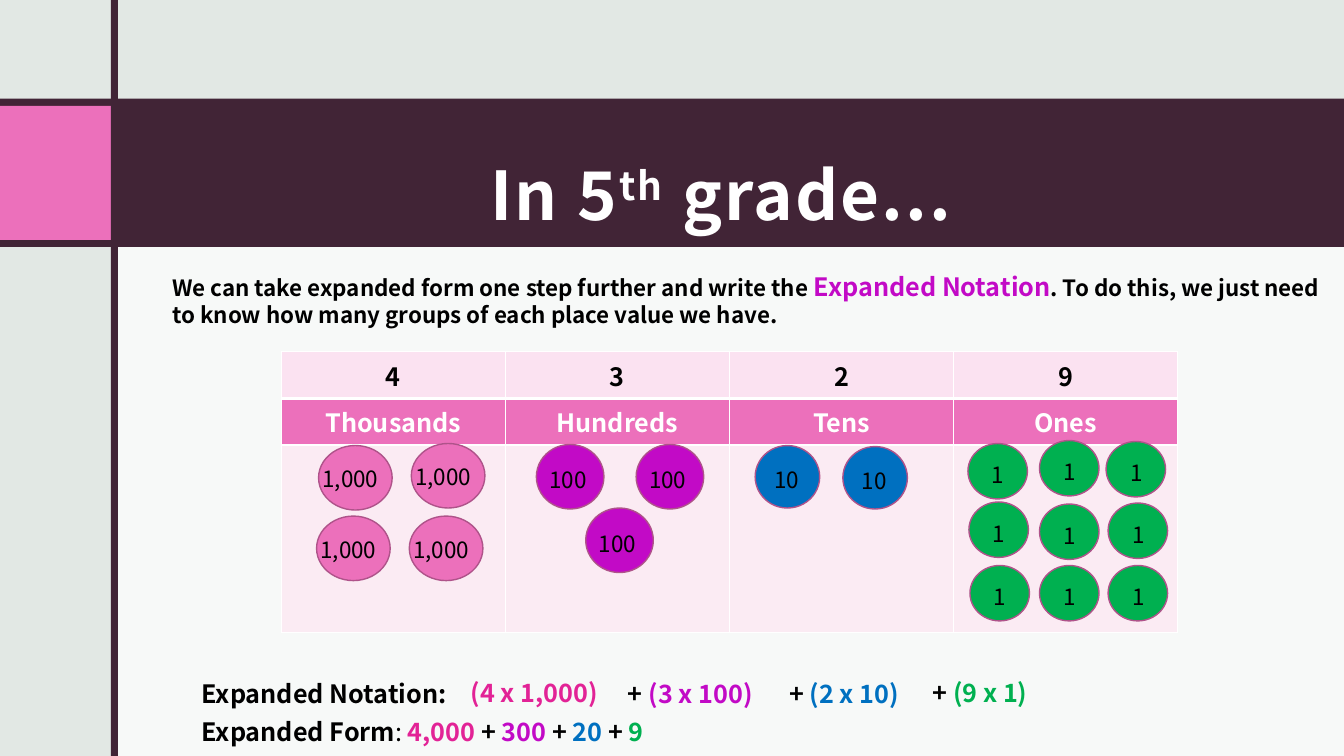
"""Build the fifth-grade expanded notation slide."""
from lxml import etree
from pptx import Presentation
from pptx.dml.color import RGBColor
from pptx.enum.shapes import MSO_SHAPE
from pptx.enum.text import MSO_ANCHOR, PP_ALIGN
from pptx.oxml.ns import qn
from pptx.util import Inches, Pt

RECT, OVAL = MSO_SHAPE.RECTANGLE, MSO_SHAPE.OVAL
CENTER, MIDDLE, TOP = PP_ALIGN.CENTER, MSO_ANCHOR.MIDDLE, MSO_ANCHOR.TOP
FONT = "Noto Sans CJK JP"
BLACK, WHITE = RGBColor(0, 0, 0), RGBColor(255, 255, 255)
MIST, PLUM = RGBColor(0xE2, 0xE8, 0xE4), RGBColor(0x41, 0x24, 0x36)
PINK, ROSE = RGBColor(0xEC, 0x70, 0xBB), RGBColor(0xE2, 0x23, 0x96)
PURPLE, BLUE = RGBColor(0xC2, 0x0A, 0xC6), RGBColor(0, 0x70, 0xC0)
GREEN, EDGE = RGBColor(0, 0xB0, 0x50), RGBColor(0xAF, 0x53, 0x8A)
DIGIT_FILL, BODY_FILL = RGBColor(0xFB, 0xE2, 0xF1), RGBColor(0xFB, 0xEB, 0xF3)

WIDTH, HEIGHT = 13.33, 7.5
BAND_TOP, BAND_H, BAR_X, BAR_W = 0.98, 1.47, 1.1, 0.07
TITLE = [("In 5", 0), ("th", 30000), (" grade...", 0)]

TABLE_BOX = (2.79, 3.49, 8.89, 2.71)
ROW_HEIGHTS = (0.45, 0.4, 1.86)
TABLE_ROWS = [
    (("4", "3", "2", "9"), DIGIT_FILL, BLACK, MIDDLE),
    (("Thousands", "Hundreds", "Tens", "Ones"), PINK, WHITE, TOP),
    (("", "", "", ""), BODY_FILL, BLACK, TOP),
]

DISCS = [
    ("1,000", PINK, (0.73, 0.64), (-0.06, 0.15, 0.96),
     [(3.16, 4.42), (4.08, 4.4), (3.14, 5.12), (4.06, 5.12)]),
    ("100", PURPLE, (0.67, 0.64), (0.03, 0.17, 0.64),
     [(5.32, 4.41), (5.81, 5.04), (6.31, 4.41)]),
    ("10", BLUE, (0.64, 0.62), (0.09, 0.16, 0.61),
     [(7.49, 4.42), (8.36, 4.43)]),
    ("1", GREEN, (0.59, 0.55), (0.14, 0.13, 0.56),
     [(9.6, 4.4), (10.31, 4.37), (10.97, 4.38),
      (9.61, 4.98), (10.31, 5), (10.99, 4.99),
      (9.62, 5.61), (10.31, 5.61), (10.99, 5.61)]),
]

TEXTS = [
    ((1.61, 2.64, 11.72, 0.67), [
        ("We can take expanded form one step further and write the ", BLACK, 16, True),
        ("Expanded Notation", PURPLE, 18, True),
        (". To do this, we just need to know how many groups of each "
         "place value we have.", BLACK, 16, True)]),
    ((1.9, 6.68, 2.89, 0.4), [("Expanded Notation:", BLACK, 18, True)]),
    ((4.57, 6.67, 6.67, 0.4), [("(4 x 1,000)", ROSE, 18, True)]),
    ((6.13, 6.68, 2.38, 0.4), [("+ ", BLACK, 18, True), ("(3 x 100)", PURPLE, 18, True)]),
    ((7.73, 6.68, 1.8, 0.4), [("+ ", BLACK, 18, True), ("(2 x 10)", BLUE, 18, True)]),
    ((9.15, 6.67, 1.47, 0.4), [("+ ", BLACK, 18, True), ("(9 x 1)", GREEN, 18, True)]),
    ((1.9, 7.06, 8.61, 0.4), [
        ("Expanded Form", BLACK, 18, True), (": ", BLACK, 18, False),
        ("4,000 ", ROSE, 18, True), ("+ ", BLACK, 18, True),
        ("300", PURPLE, 18, True), (" + ", BLACK, 18, True),
        ("20", BLUE, 18, True), (" + ", BLACK, 18, True),
        ("9", GREEN, 18, True)]),
]


def style(font, color, size, bold):
    font.name, font.size, font.bold = FONT, Pt(size), bold
    font.color.rgb = color


def add_block(shapes, kind, box, color, edge=None):
    sp = shapes.add_shape(kind, *map(Inches, box))
    sp.shadow.inherit = False
    sp.fill.solid()
    sp.fill.fore_color.rgb = color
    if edge is None:
        sp.line.fill.background()
    else:
        sp.line.color.rgb = edge
        sp.line.width = Pt(1)
    return sp


def add_text(shapes, box, runs):
    tf = shapes.add_textbox(*map(Inches, box)).text_frame
    tf.word_wrap = True
    for text, color, size, bold in runs:
        r = tf.paragraphs[0].add_run()
        r.text = text
        style(r.font, color, size, bold)


def add_frame(s):
    s.background.fill.solid()
    s.background.fill.fore_color.rgb = MIST
    left, top = BAR_X + BAR_W / 2, BAND_TOP + BAND_H - 0.12
    panel = add_block(s.shapes, RECT, (left, top, WIDTH - left, HEIGHT - top), WHITE)
    color = panel.fill._xPr.find(".//" + qn("a:srgbClr"))
    etree.SubElement(color, qn("a:alpha"), val="75000")
    add_block(s.shapes, RECT, (0, BAND_TOP, WIDTH, BAND_H), PLUM)
    add_block(s.shapes, RECT, (0, BAND_TOP + BAR_W, BAR_X, BAND_H - 2 * BAR_W), PINK)
    add_block(s.shapes, RECT, (BAR_X, 0, BAR_W, HEIGHT), PLUM)


def add_title(s):
    title = s.shapes.title
    s.shapes._spTree.append(title._element)
    title.left, title.top = Inches(1.68), Inches(BAND_TOP)
    title.width, title.height = Inches(10.95), Inches(BAND_H)
    tf = title.text_frame
    tf.vertical_anchor = MIDDLE
    tf.margin_left = tf.margin_right = tf.margin_top = Inches(0.12)
    tf.margin_bottom = Inches(0.1)
    p = tf.paragraphs[0]
    p.alignment, p.line_spacing = CENTER, 1.5
    for text, baseline in TITLE:
        r = p.add_run()
        r.text = text
        style(r.font, WHITE, 48, True)
        r.font._element.set("spc", "150")
        r.font._element.set("baseline", str(baseline))


def add_borders(cell, bottom):
    tc_pr = cell._tc.get_or_add_tcPr()
    for i, (side, points) in enumerate((("L", 1), ("R", 1), ("T", 1), ("B", bottom))):
        ln = etree.Element(qn("a:ln" + side), w=str(Pt(points)))
        fill = etree.SubElement(ln, qn("a:solidFill"))
        etree.SubElement(fill, qn("a:srgbClr"), val=str(WHITE))
        tc_pr.insert(i, ln)


def add_place_table(s):
    rows, cols = len(TABLE_ROWS), len(TABLE_ROWS[0][0])
    table = s.shapes.add_table(rows, cols, *map(Inches, TABLE_BOX)).table
    for i, (texts, fill, color, anchor) in enumerate(TABLE_ROWS):
        table.rows[i].height = Inches(ROW_HEIGHTS[i])
        for j, text in enumerate(texts):
            cell = table.cell(i, j)
            cell.text = text
            cell.vertical_anchor = anchor
            cell.fill.solid()
            cell.fill.fore_color.rgb = fill
            add_borders(cell, 3 if i == 0 else 1)
            p = cell.text_frame.paragraphs[0]
            p.alignment = CENTER
            style(p.font, color, 18, True)
            for r in p.runs:
                style(r.font, color, 18, True)


def add_discs(s):
    for label, color, (w, h), (dx, dy, label_w), places in DISCS:
        for x, y in places:
            group = s.shapes.add_group_shape()
            add_block(group.shapes, OVAL, (x, y, w, h), color, EDGE)
            add_text(group.shapes, (x + dx, y + dy, label_w, 0.37),
                     [(label, BLACK, 16, False)])


def main():
    prs = Presentation()
    prs.slide_width, prs.slide_height = Inches(WIDTH), Inches(HEIGHT)
    s = prs.slides.add_slide(prs.slide_layouts[5])
    add_frame(s)
    add_title(s)
    add_place_table(s)
    add_discs(s)
    for box, runs in TEXTS:
        add_text(s.shapes, box, runs)
    prs.save("out.pptx")


if __name__ == "__main__":
    main()
